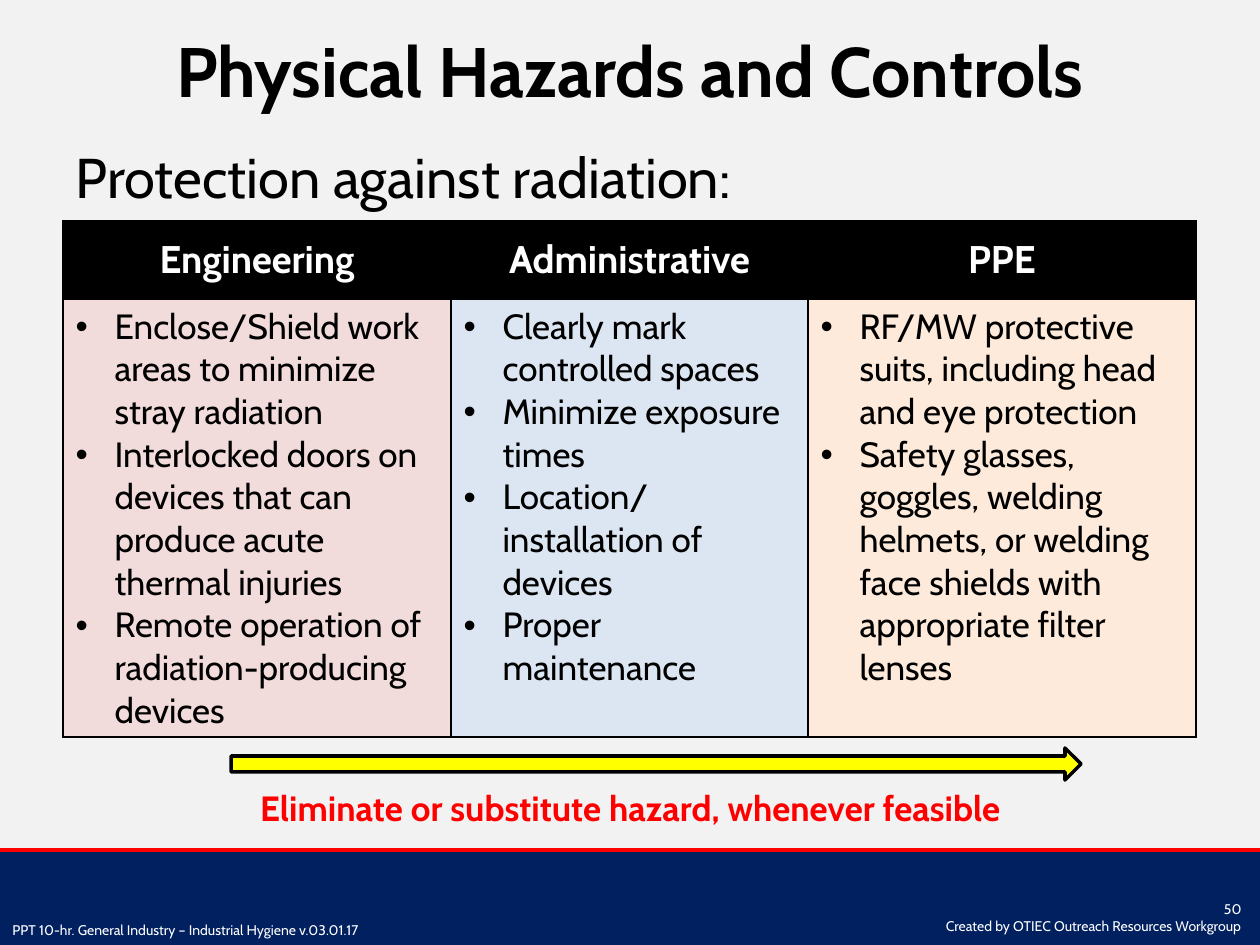
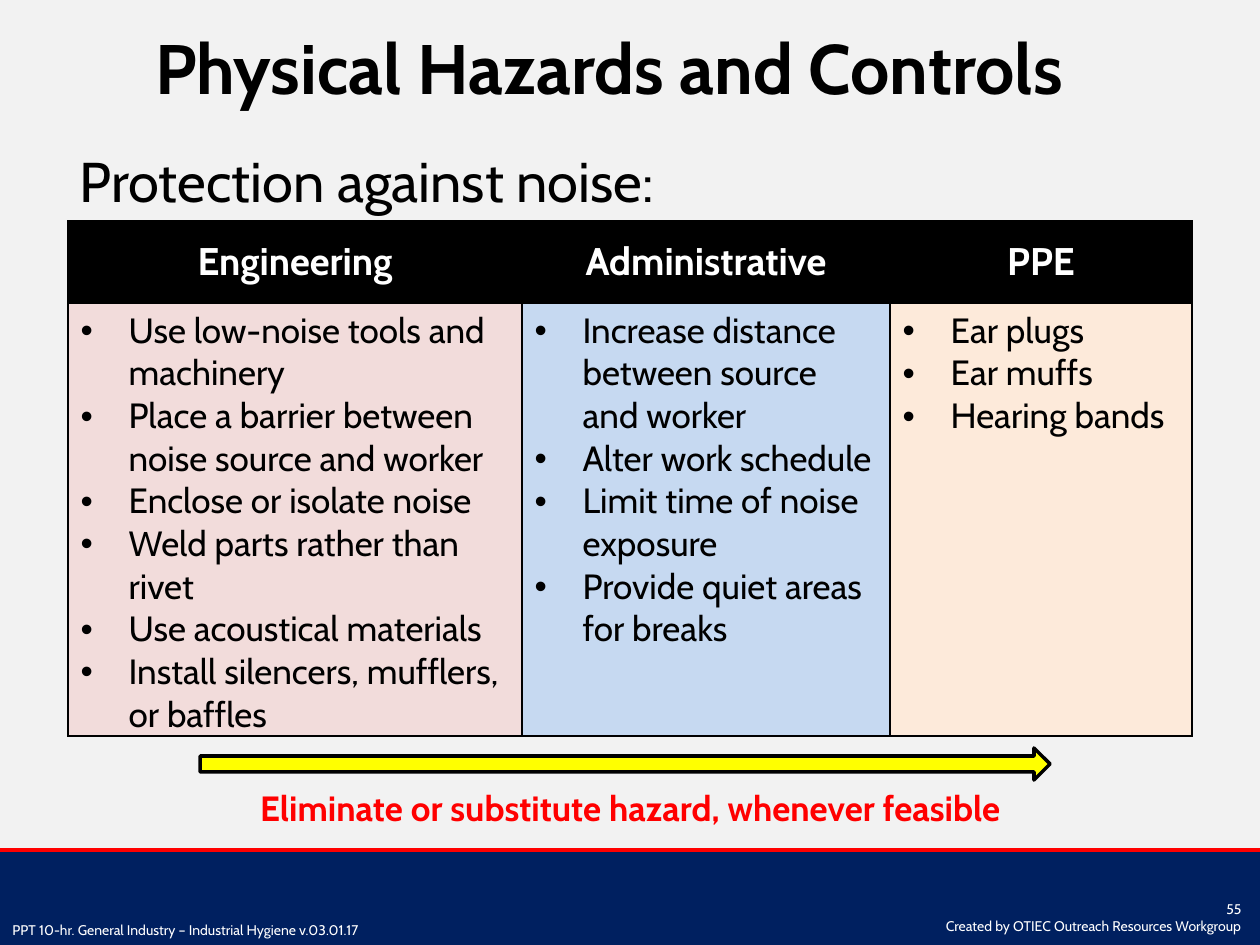
"""Build two slides on controls for physical hazards."""
from dataclasses import dataclass

from lxml.etree import SubElement
from pptx import Presentation
from pptx.dml.color import RGBColor
from pptx.enum.shapes import MSO_CONNECTOR as Connector, MSO_SHAPE as Shape
from pptx.enum.text import MSO_ANCHOR as Anchor, MSO_AUTO_SIZE as AutoSize, PP_ALIGN as Align
from pptx.oxml.ns import qn
from pptx.util import Emu, Pt

EMU_PER_PX = 914400 / 126
WIDTH, HEIGHT, BAND_TOP = 1260, 945, 850


@dataclass(frozen=True)
class Theme:
    """Colours, font and type sizes of the deck."""
    font: str = "Cabin"
    paper: str = "F2F2F2"
    navy: str = "002060"
    red: str = "FF0000"
    yellow: str = "FFFF00"
    black: str = "000000"
    white: str = "FFFFFF"
    pink: str = "F2DCDB"
    pale_blue: str = "DCE6F2"
    sky_blue: str = "C6D9F1"
    peach: str = "FDEADA"
    title: int = 40
    subtitle: int = 32
    header: int = 22
    body: int = 20
    footer: int = 8
    rule: int = 2
    border: int = 1


THEME = Theme()


@dataclass(frozen=True)
class Box:
    """A rectangle in px."""
    left: int
    top: int
    width: int
    height: int

    def emu(self) -> tuple[Emu, ...]:
        """Return the rectangle in EMU."""
        return tuple(map(px, (self.left, self.top, self.width, self.height)))


@dataclass(frozen=True)
class Control:
    """One column of the controls table."""
    heading: str
    width: int
    fill: str
    measures: tuple[str, ...]


@dataclass(frozen=True)
class HazardPage:
    """What differs from one hazard slide to the next."""
    number: int
    subtitle: str
    title_box: Box
    subtitle_box: Box
    table_left: int
    row_heights: tuple[int, int]
    indent: int
    arrow_left: int
    controls: tuple[Control, ...]


PAGES = (
    HazardPage(
        50, "Protection against radiation:", Box(63, 21, 1134, 158), Box(63, 136, 1008, 136),
        63, (78, 438), 39, 231,
        (
            Control("Engineering", 388, THEME.pink, (
                "Enclose/Shield work areas to minimize stray radiation",
                "Interlocked doors on devices that can produce acute thermal injuries",
                "Remote operation of radiation-producing devices",
            )),
            Control("Administrative", 357, THEME.pale_blue, (
                "Clearly mark controlled spaces",
                "Minimize exposure times",
                "Location/ installation of devices",
                "Proper maintenance",
            )),
            Control("PPE", 388, THEME.peach, (
                "RF/MW protective suits, including head and eye protection",
                "Safety glasses, goggles, welding helmets, or welding face shields "
                "with appropriate filter lenses",
            )),
        ),
    ),
    HazardPage(
        55, "Protection against noise:", Box(42, 18, 1134, 108), Box(67, 140, 1008, 147),
        68, (82, 432), 48, 200,
        (
            Control("Engineering", 454, THEME.pink, (
                "Use low-noise tools and machinery",
                "Place a barrier between noise source and worker",
                "Enclose or isolate noise",
                "Weld parts rather than rivet",
                "Use acoustical materials",
                "Install silencers, mufflers, or baffles",
            )),
            Control("Administrative", 368, THEME.sky_blue, (
                "Increase distance between source and worker",
                "Alter work schedule",
                "Limit time of noise exposure",
                "Provide quiet areas for breaks",
            )),
            Control("PPE", 302, THEME.peach, ("Ear plugs", "Ear muffs", "Hearing bands")),
        ),
    ),
)


def px(length: int) -> Emu:
    """Turn px into EMU."""
    return Emu(round(length * EMU_PER_PX))


def rgb(value: str) -> RGBColor:
    """Turn a hex string into a colour."""
    return RGBColor.from_string(value)


def write(frame, *lines: str, size: int, color: str = THEME.black, bold: bool = False,
          align: Align = Align.LEFT, anchor: Anchor = Anchor.TOP) -> None:
    """Fill a text frame with one formatted paragraph per line."""
    frame.word_wrap = True
    frame.vertical_anchor = anchor
    for index, line in enumerate(lines):
        para = frame.paragraphs[0] if index == 0 else frame.add_paragraph()
        para.alignment = align
        span = para.add_run()
        span.text = line
        font = span.font
        font.name, font.size, font.bold = THEME.font, Pt(size), bold
        font.color.rgb = rgb(color)


def set_bullet(para, indent: int) -> None:
    """Give a paragraph a hanging bullet, or none if the indent is zero."""
    props = para._p.get_or_add_pPr()
    props.set("marL", str(px(indent)))
    props.set("indent", str(-px(indent)))
    if indent:
        SubElement(props, qn("a:buFont"), typeface="Arial")
        SubElement(props, qn("a:buChar"), char="•")
    else:
        SubElement(props, qn("a:buNone"))


def add_text(page, box: Box, *lines: str, **style) -> None:
    """Add a text box."""
    write(page.shapes.add_textbox(*box.emu()).text_frame, *lines, **style)


def fill_placeholder(holder, box: Box, text: str, **style) -> None:
    """Move a placeholder and fill it with one line."""
    holder.left, holder.top, holder.width, holder.height = box.emu()
    holder.text_frame.auto_size = AutoSize.NONE
    write(holder.text_frame, text, **style)


def add_shape(page, kind: Shape, box: Box, fill: str, line: str | None = None) -> None:
    """Add a flat preset shape, outlined if a line colour is given."""
    shape = page.shapes.add_shape(kind, *box.emu())
    shape.shadow.inherit = False
    shape.fill.solid()
    shape.fill.fore_color.rgb = rgb(fill)
    if line:
        shape.line.color.rgb = rgb(line)
        shape.line.width = Pt(THEME.rule)
    else:
        shape.line.fill.background()


def add_footer(page, number: int) -> None:
    """Draw the navy band, its red rule and the footer texts."""
    add_shape(page, Shape.RECTANGLE, Box(0, BAND_TOP, WIDTH, HEIGHT - BAND_TOP), THEME.navy)
    rule = page.shapes.add_connector(
        Connector.STRAIGHT, px(0), px(BAND_TOP), px(WIDTH), px(BAND_TOP))
    rule.line.color.rgb = rgb(THEME.red)
    rule.line.width = Pt(THEME.rule)
    SubElement(rule._element.spPr, qn("a:effectLst"))
    style = dict(size=THEME.footer, color=THEME.white)
    add_text(page, Box(0, 915, 400, 30),
             "PPT 10-hr. General Industry – Industrial Hygiene v.03.01.17", **style)
    add_text(page, Box(866, 888, 388, 59), str(number),
             "Created by OTIEC Outreach Resources Workgroup",
             align=Align.RIGHT, anchor=Anchor.MIDDLE, **style)


def paint_cell(cell, fill: str) -> None:
    """Give a cell black borders and a solid fill."""
    props = cell._tc.get_or_add_tcPr()
    for side in ("lnL", "lnR", "lnT", "lnB"):
        edge = SubElement(props, qn(f"a:{side}"), w=str(Pt(THEME.border)))
        SubElement(SubElement(edge, qn("a:solidFill")), qn("a:srgbClr"), val=THEME.black)
    cell.fill.solid()
    cell.fill.fore_color.rgb = rgb(fill)


def add_controls(page, hazard: HazardPage) -> None:
    """Draw the table of controls."""
    controls = hazard.controls
    box = Box(hazard.table_left, 221, sum(control.width for control in controls),
              sum(hazard.row_heights))
    table = page.shapes.add_table(2, len(controls), *box.emu()).table
    for row, height in zip(table.rows, hazard.row_heights):
        row.height = px(height)
    for index, control in enumerate(controls):
        table.columns[index].width = px(control.width)
        head, body = table.cell(0, index), table.cell(1, index)
        paint_cell(head, THEME.black)
        paint_cell(body, control.fill)
        write(head.text_frame, control.heading, size=THEME.header, color=THEME.white,
              bold=True, align=Align.CENTER)
        head.vertical_anchor = Anchor.MIDDLE
        write(body.text_frame, *control.measures, size=THEME.body)
        for para in body.text_frame.paragraphs:
            set_bullet(para, hazard.indent)


def add_page(deck, hazard: HazardPage) -> None:
    """Add one hazard slide."""
    page = deck.slides.add_slide(deck.slide_layouts[1])
    title, subtitle = page.placeholders
    add_footer(page, hazard.number)
    fill_placeholder(title, hazard.title_box, "Physical Hazards and Controls",
                     size=THEME.title, bold=True, align=Align.CENTER)
    fill_placeholder(subtitle, hazard.subtitle_box, hazard.subtitle, size=THEME.subtitle)
    set_bullet(subtitle.text_frame.paragraphs[0], 0)
    add_text(page, Box(158, 780, 945, 55), "Eliminate or substitute hazard, whenever feasible",
             size=THEME.body, color=THEME.red, bold=True, align=Align.CENTER)
    add_shape(page, Shape.RIGHT_ARROW, Box(hazard.arrow_left, 748, 850, 32),
              THEME.yellow, THEME.black)
    add_controls(page, hazard)


def main() -> None:
    """Build and save the deck."""
    deck = Presentation()
    deck.slide_width, deck.slide_height = px(WIDTH), px(HEIGHT)
    paper = deck.slide_master.background.fill
    paper.solid()
    paper.fore_color.rgb = rgb(THEME.paper)
    for hazard in PAGES:
        add_page(deck, hazard)
    deck.save("out.pptx")


if __name__ == "__main__":
    main()
